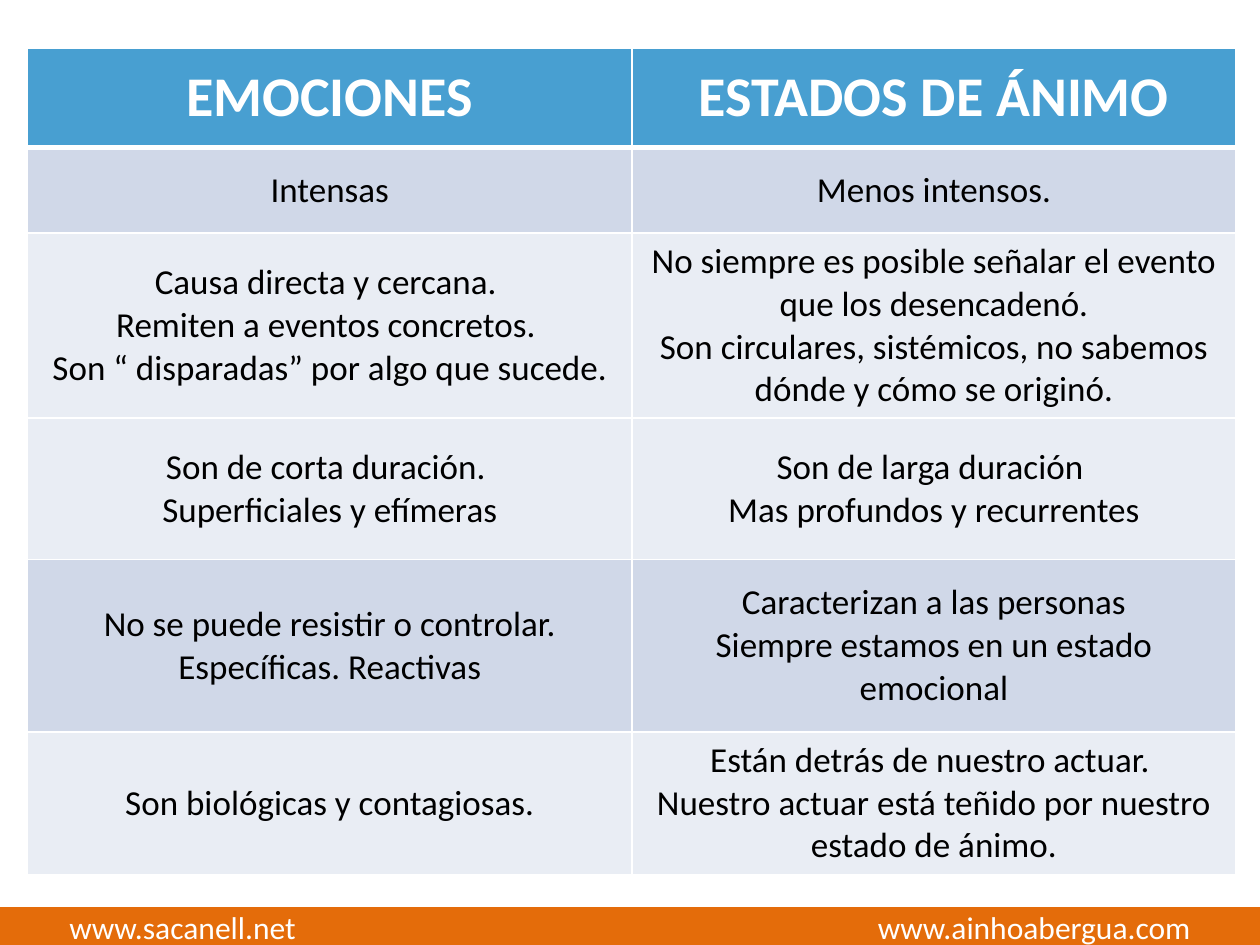
from pptx import Presentation
from pptx.dml.color import RGBColor
from pptx.enum.shapes import MSO_SHAPE
from pptx.enum.text import MSO_ANCHOR, PP_ALIGN
from pptx.oxml.ns import qn
from pptx.util import Inches, Pt
from lxml import etree

RECTANGLE = MSO_SHAPE.RECTANGLE
MIDDLE = MSO_ANCHOR.MIDDLE
CENTER = PP_ALIGN.CENTER
LEFT = PP_ALIGN.LEFT

COLORS = {
    "white": "FFFFFF",
    "black": "000000",
    "header": "489FD1",
    "dark_band": "D0D8E8",
    "light_band": "E9EDF4",
    "footer": "E46C0A",
}

HEADINGS = ["EMOCIONES", "ESTADOS DE ÁNIMO"]
COMPARISON = [
    (6.8, "dark_band", ["Intensas"], ["Menos intensos."]),
    (14.7, "light_band",
     ["Causa directa y cercana. ", "Remiten a eventos concretos. ",
      "Son “ disparadas” por algo que sucede."],
     ["No siempre es posible señalar el evento que los desencadenó.",
      "Son circulares, sistémicos, no sabemos dónde y cómo se originó."]),
    (11.2, "light_band",
     ["Son de corta duración. ", "Superficiales y efímeras"],
     ["Son de larga duración ", "Mas profundos y recurrentes"]),
    (13.7, "dark_band",
     ["No se puede resistir o controlar. Específicas. Reactivas"],
     ["Caracterizan a las personas", "Siempre estamos en un estado emocional"]),
    (11.3, "light_band",
     ["Son biológicas y contagiosas."],
     ["Están detrás de nuestro actuar. ",
      "Nuestro actuar está teñido por nuestro estado de ánimo."]),
]
HEADER_HEIGHT = 7.9


class SlideBuilder:
    font = "Calibri"
    grid_columns = 100
    grid_rows = 75

    def __init__(self, presentation):
        self.width = presentation.slide_width
        self.height = presentation.slide_height
        self.slide = presentation.slides.add_slide(presentation.slide_layouts[6])

    def across(self, columns):
        return round(self.width * columns / self.grid_columns)

    def down(self, rows):
        return round(self.height * rows / self.grid_rows)

    def color(self, name):
        return RGBColor.from_string(COLORS[name])

    def paint(self, fill, name):
        fill.solid()
        fill.fore_color.rgb = self.color(name)

    def add_text(self, text_frame, lines, size, color, bold=False, alignment=CENTER):
        for index, line in enumerate(lines):
            paragraph = text_frame.paragraphs[0] if index == 0 else text_frame.add_paragraph()
            paragraph.alignment = alignment
            run = paragraph.add_run()
            run.text = line
            run.font.name = self.font
            run.font.size = Pt(size)
            run.font.bold = bold
            run.font.color.rgb = self.color(color)

    def border(self, cell, side, points):
        properties = cell._tc.get_or_add_tcPr()
        line = etree.SubElement(properties, qn(f"a:ln{side}"), w=str(Pt(points)))
        fill = etree.SubElement(line, qn("a:solidFill"))
        etree.SubElement(fill, qn("a:srgbClr"), val=COLORS["white"])

    def cell(self, cell, lines, fill, thick_side=None, **style):
        for side in "LRTB":
            self.border(cell, side, 3 if side == thick_side else 1)
        self.paint(cell.fill, fill)
        cell.vertical_anchor = MIDDLE
        self.add_text(cell.text_frame, lines, **style)

    def table(self, left, top, width, headings, body):
        heights = [HEADER_HEIGHT] + [row[0] for row in body]
        table = self.slide.shapes.add_table(
            len(heights), len(headings), self.across(left), self.down(top),
            self.across(width), self.down(sum(heights))).table
        for column in table.columns:
            column.width = self.across(width / len(headings))
        for row, height in zip(table.rows, heights):
            row.height = self.down(height)
        for index, heading in enumerate(headings):
            self.cell(table.cell(0, index), [heading], "header", "B",
                      size=32, color="white", bold=True)
        for row, (_, band, *texts) in enumerate(body, start=1):
            for column, lines in enumerate(texts):
                self.cell(table.cell(row, column), lines, band,
                          "T" if row == 1 else None, size=20, color="black")

    def footer(self, top, height, margin, left_text, right_text):
        bar = self.slide.shapes.add_shape(
            RECTANGLE, 0, self.down(top), self.width, self.down(height))
        bar.shadow.inherit = False
        self.paint(bar.fill, "footer")
        bar.line.color.rgb = self.color("footer")
        bar.line.width = Pt(2)
        text_frame = bar.text_frame
        text_frame.word_wrap = True
        text_frame.vertical_anchor = MIDDLE
        text_frame.margin_left = text_frame.margin_right = self.across(margin)
        properties = text_frame.paragraphs[0]._p.get_or_add_pPr()
        tabs = etree.SubElement(properties, qn("a:tabLst"))
        position = self.across(self.grid_columns - 2 * margin)
        etree.SubElement(tabs, qn("a:tab"), pos=str(position), algn="r")
        self.add_text(text_frame, [f"{left_text}\t{right_text}"], 18, "white", alignment=LEFT)


def main():
    presentation = Presentation()
    presentation.slide_width = Inches(10)
    presentation.slide_height = Inches(7.5)
    builder = SlideBuilder(presentation)
    builder.table(2.2, 3.8, 95.9, HEADINGS, COMPARISON)
    builder.footer(72.1, 2.9, 5.5, "www.sacanell.net", "www.ainhoabergua.com")
    presentation.save("out.pptx")


if __name__ == "__main__":
    main()
